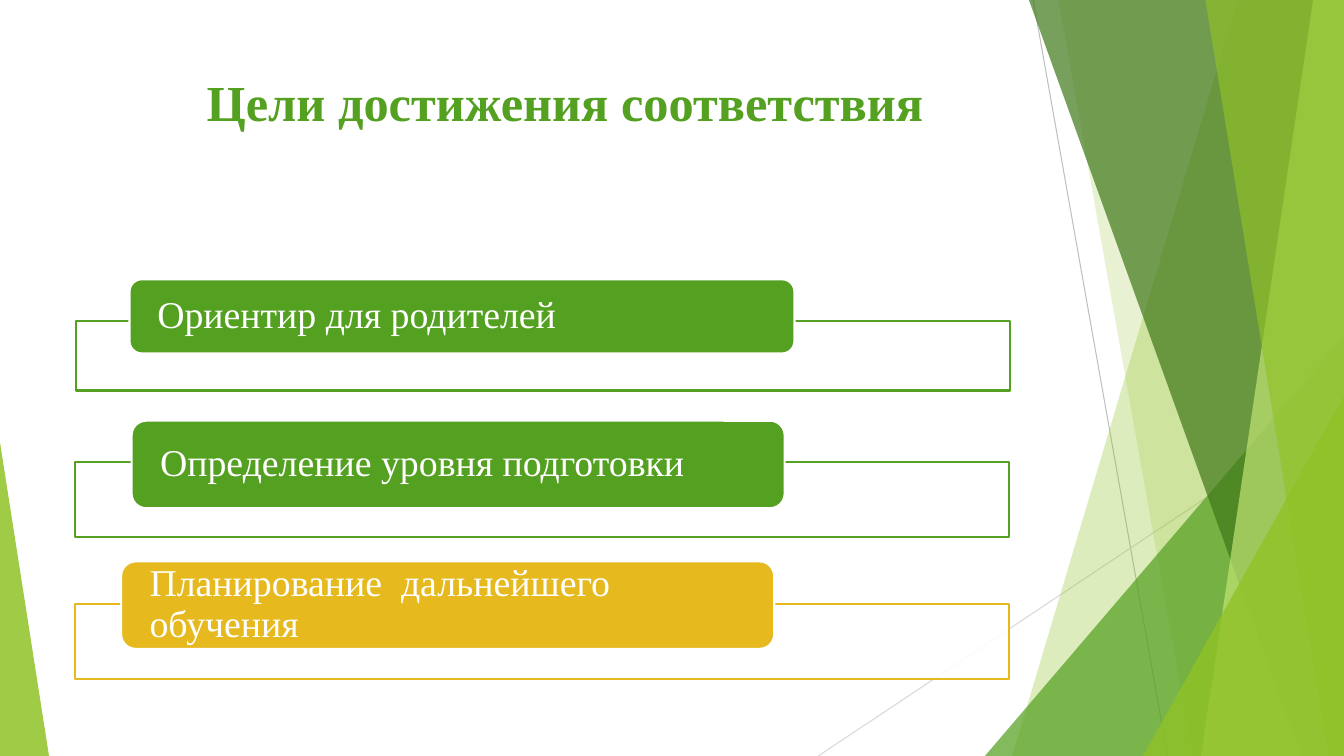
from pptx import Presentation
from pptx.dml.color import RGBColor as Rgb
from pptx.enum.shapes import MSO_CONNECTOR as Conn, MSO_SHAPE as Kind
from pptx.enum.text import MSO_ANCHOR as Anchor, PP_ALIGN as Align
from pptx.oxml.ns import qn
from pptx.util import Pt
from lxml.etree import SubElement as Sub

HUES = {
    "white": "FFFFFF", "green": "54A021", "lime": "90C226",
    "dark": "3F7819", "pale": "C0E474", "gold": "E6B91E",
    "gray": "BFBFBF", "mist": "D9D9D9",
}
WIDE, HIGH = 960, 540


class Deck:
    font = "Times New Roman"

    def __init__(self):
        self.prs = Presentation()
        self.prs.slide_width, self.prs.slide_height = Pt(WIDE), Pt(HIGH)
        self.slide = self.prs.slides.add_slide(self.prs.slide_layouts[6])
        self.shapes = self.slide.shapes

    def hue(self, name):
        return Rgb.from_string(HUES[name])

    def paint(self, shape, fill, alpha=100, edge=None):
        """Set fill, opacity in percent and outline, without a shadow."""
        shape.shadow.inherit = False
        shape.fill.solid()
        shape.fill.fore_color.rgb = self.hue(fill)
        if alpha < 100:
            tint = shape._element.spPr.find(qn("a:solidFill"))[0]
            Sub(tint, qn("a:alpha"), val=str(alpha * 1000))
        if edge:
            shape.line.color.rgb = self.hue(edge)
            shape.line.width = Pt(1.5)
        else:
            shape.line.fill.background()

    def line(self, x1, y1, x2, y2, color):
        line = self.shapes.add_connector(
            Conn.STRAIGHT, Pt(x1), Pt(y1), Pt(x2), Pt(y2))
        line.line.color.rgb = self.hue(color)
        line.line.width = Pt(0.75)
        Sub(line._element.spPr, qn("a:effectLst"))

    def facet(self, top, base, fill, alpha):
        """Fill from a slanted left edge to the right side of the slide."""
        form = self.shapes.build_freeform(Pt(top), 0, scale=1.0)
        form.add_line_segments(
            [(Pt(WIDE), 0), (Pt(WIDE), Pt(HIGH)), (Pt(base), Pt(HIGH))])
        self.paint(form.convert_to_shape(), fill, alpha)

    def wedge(self, x, y, w, peak, fill, alpha):
        """Stand a triangle on the lower edge; peak is 0 left to 1 right."""
        shape = self.box(Kind.ISOSCELES_TRIANGLE, x, y, w, HIGH - y)
        shape.adjustments[0] = peak
        self.paint(shape, fill, alpha)

    def box(self, kind, x, y, w, h):
        return self.shapes.add_shape(kind, Pt(x), Pt(y), Pt(w), Pt(h))

    def label(self, shape, text, size, color, align, bold=False):
        frame = shape.text_frame
        frame.word_wrap = True
        par = frame.paragraphs[0]
        par.text = text
        par.alignment = align
        font = par.font
        font.name, font.size, font.bold = self.font, Pt(size), bold
        font.color.rgb = self.hue(color)
        return frame

    def title(self, text, x, y, w, h):
        box = self.shapes.add_textbox(Pt(x), Pt(y), Pt(w), Pt(h))
        self.label(box, text, 36, "green", Align.CENTER, True)

    def goal(self, text, color, frame, tab):
        self.paint(self.box(Kind.RECTANGLE, *frame), "white", 90, color)
        shape = self.box(Kind.ROUNDED_RECTANGLE, *tab)
        self.paint(shape, color, edge="white")
        body = self.label(shape, text, 27, "white", Align.LEFT)
        body.vertical_anchor = Anchor.MIDDLE
        body.margin_left = body.margin_right = Pt(17.28)
        body.margin_top = body.margin_bottom = 0
        body.paragraphs[0].line_spacing = 0.9


def main():
    deck = Deck()
    deck.line(738, 0, 834, HIGH, "gray")
    deck.line(WIDE, 290, 584.5, HIGH, "mist")
    deck.facet(884, 723, "lime", 30)
    deck.facet(756, 852, "lime", 20)
    deck.wedge(703.5, 240, 256.5, 1, "green", 72)
    deck.facet(735, 929.5, "dark", 70)
    deck.facet(938, 858, "pale", 70)
    deck.facet(861, 949, "lime", 65)
    deck.wedge(816.5, 283, 143.5, 1, "lime", 80)
    deck.wedge(0, 316, 35, 0, "lime", 85)

    deck.title("Цели достижения соответствия", 53.5, 47, 700.5, 103.5)
    goals = [
        ("Ориентир для родителей", "green",
         (54.5, 229.5, 667, 49.5), (92.5, 199.5, 475, 53)),
        ("Определение уровня подготовки", "green",
         (53.5, 330, 667, 53.5), (94, 300.5, 466.5, 62.5)),
        ("Планирование  дальнейшего обучения", "gold",
         (53.5, 431.5, 667, 53.5), (86.5, 401, 466.5, 62.5)),
    ]
    for goal in goals:
        deck.goal(*goal)
    deck.prs.save("out.pptx")


if __name__ == "__main__":
    main()
